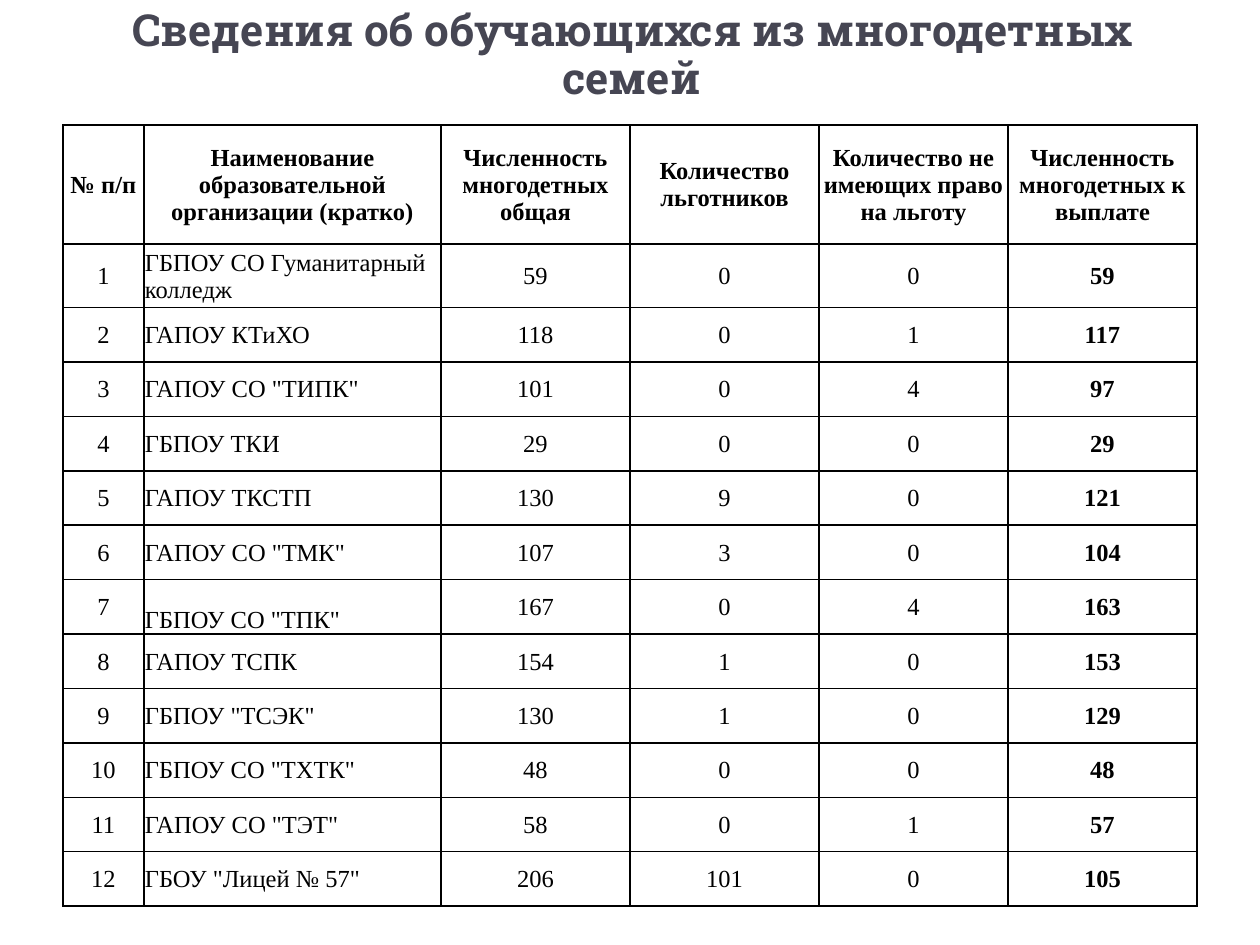
from lxml import etree
from pptx import Presentation
from pptx.dml.color import RGBColor
from pptx.enum import text as t
from pptx.oxml import ns
from pptx.util import Cm, Pt

TITLE_COLOR = RGBColor(0x46, 0x46, 0x53)
BLACK = RGBColor(0, 0, 0)

TITLE = "Сведения об обучающихся из многодетных семей"
HEADERS = [
    "№ п/п",
    "Наименование образовательной организации (кратко)",
    "Численность многодетных общая",
    "Количество льготников",
    "Количество не имеющих право на льготу",
    "Численность многодетных к выплате",
]
# Organisation, total, with benefits, not entitled, to be paid
COLLEGES = [
    ("ГБПОУ СО Гуманитарный колледж", 59, 0, 0, 59),
    ("ГАПОУ КТиХО", 118, 0, 1, 117),
    ('ГАПОУ СО "ТИПК"', 101, 0, 4, 97),
    ("ГБПОУ ТКИ", 29, 0, 0, 29),
    ("ГАПОУ ТКСТП", 130, 9, 0, 121),
    ('ГАПОУ СО "ТМК"', 107, 3, 0, 104),
    ('ГБПОУ СО "ТПК"', 167, 0, 4, 163),
    ("ГАПОУ ТСПК", 154, 1, 0, 153),
    ('ГБПОУ "ТСЭК"', 130, 1, 0, 129),
    ('ГБПОУ СО "ТХТК"', 48, 0, 0, 48),
    ('ГАПОУ СО "ТЭТ"', 58, 0, 1, 57),
    ('ГБОУ "Лицей № 57"', 206, 101, 0, 105),
]
NAME_COLUMN, PAYMENT_COLUMN = 1, 5
BOTTOM_ALIGNED_ROW = 7

COLUMN_WIDTHS = [1.63, 5.99] + [3.81] * 4
TABLE_HEIGHT, HEADER_HEIGHT, FIRST_ROW_HEIGHT = 15.75, 2.4, 1.28


def add_run(paragraph, wording, font_name, size, color, bold):
    run = paragraph.add_run()
    run.text = wording
    run.font.name = font_name
    run.font.size = Pt(size)
    run.font.color.rgb = color
    run.font.bold = bold


def set_title(title):
    title.left, title.top = Cm(1.3), Cm(0.91)
    title.width, title.height = Cm(22.86), Cm(1.19)
    frame = title.text_frame
    frame.word_wrap = True
    frame.auto_size = t.MSO_AUTO_SIZE.NONE
    frame.vertical_anchor = t.MSO_ANCHOR.BOTTOM
    frame.margin_top = frame.margin_bottom = 0
    heading = frame.paragraphs[0]
    heading.alignment = t.PP_ALIGN.CENTER
    heading.line_spacing = 0.9
    add_run(heading, TITLE, "Roboto Slab", 25.2, TITLE_COLOR, True)


def set_borders(cell):
    properties = cell._tc.get_or_add_tcPr()
    for position, side in enumerate(("a:lnL", "a:lnR", "a:lnT", "a:lnB")):
        line = etree.Element(ns.qn(side), w=str(Pt(1)))
        fill = etree.SubElement(line, ns.qn("a:solidFill"))
        etree.SubElement(fill, ns.qn("a:srgbClr"), val=str(BLACK))
        properties.insert(position, line)


def fill_cell(cell, wording, bold, centered, anchor):
    cell.fill.background()
    set_borders(cell)
    cell.margin_left = cell.margin_right = cell.margin_top = Cm(0.02)
    cell.margin_bottom = 0
    cell.vertical_anchor = anchor
    paragraph = cell.text_frame.paragraphs[0]
    paragraph.alignment = t.PP_ALIGN.CENTER if centered else t.PP_ALIGN.LEFT
    add_run(paragraph, wording, "Times New Roman", 14, BLACK, bold)


def add_college_table(slide):
    rows = [HEADERS] + [(number, *college)
                        for number, college in enumerate(COLLEGES, 1)]
    table = slide.shapes.add_table(
        len(rows), len(HEADERS), Cm(1.27), Cm(2.52),
        Cm(sum(COLUMN_WIDTHS)), Cm(TABLE_HEIGHT)).table

    # Column widths, and equal heights for the rows after the first college
    for column, width in zip(table.columns, COLUMN_WIDTHS):
        column.width = Cm(width)
    other_rows = len(rows) - 2
    other_height = (TABLE_HEIGHT - HEADER_HEIGHT - FIRST_ROW_HEIGHT) / other_rows
    heights = [HEADER_HEIGHT, FIRST_ROW_HEIGHT] + [other_height] * other_rows
    for row, height in zip(table.rows, heights):
        row.height = Cm(height)

    # Contents
    for r, values in enumerate(rows):
        for c, value in enumerate(values):
            is_header = r == 0
            is_low = r == BOTTOM_ALIGNED_ROW and c == NAME_COLUMN
            fill_cell(
                table.cell(r, c), str(value),
                bold=is_header or c == PAYMENT_COLUMN,
                centered=is_header or c != NAME_COLUMN,
                anchor=t.MSO_ANCHOR.BOTTOM if is_low else t.MSO_ANCHOR.MIDDLE)


def main():
    deck = Presentation()
    deck.slide_width, deck.slide_height = Cm(25.4), Cm(19.05)
    slide = deck.slides.add_slide(deck.slide_layouts[5])
    set_title(slide.shapes.title)
    add_college_table(slide)
    deck.save("out.pptx")


if __name__ == "__main__":
    main()
